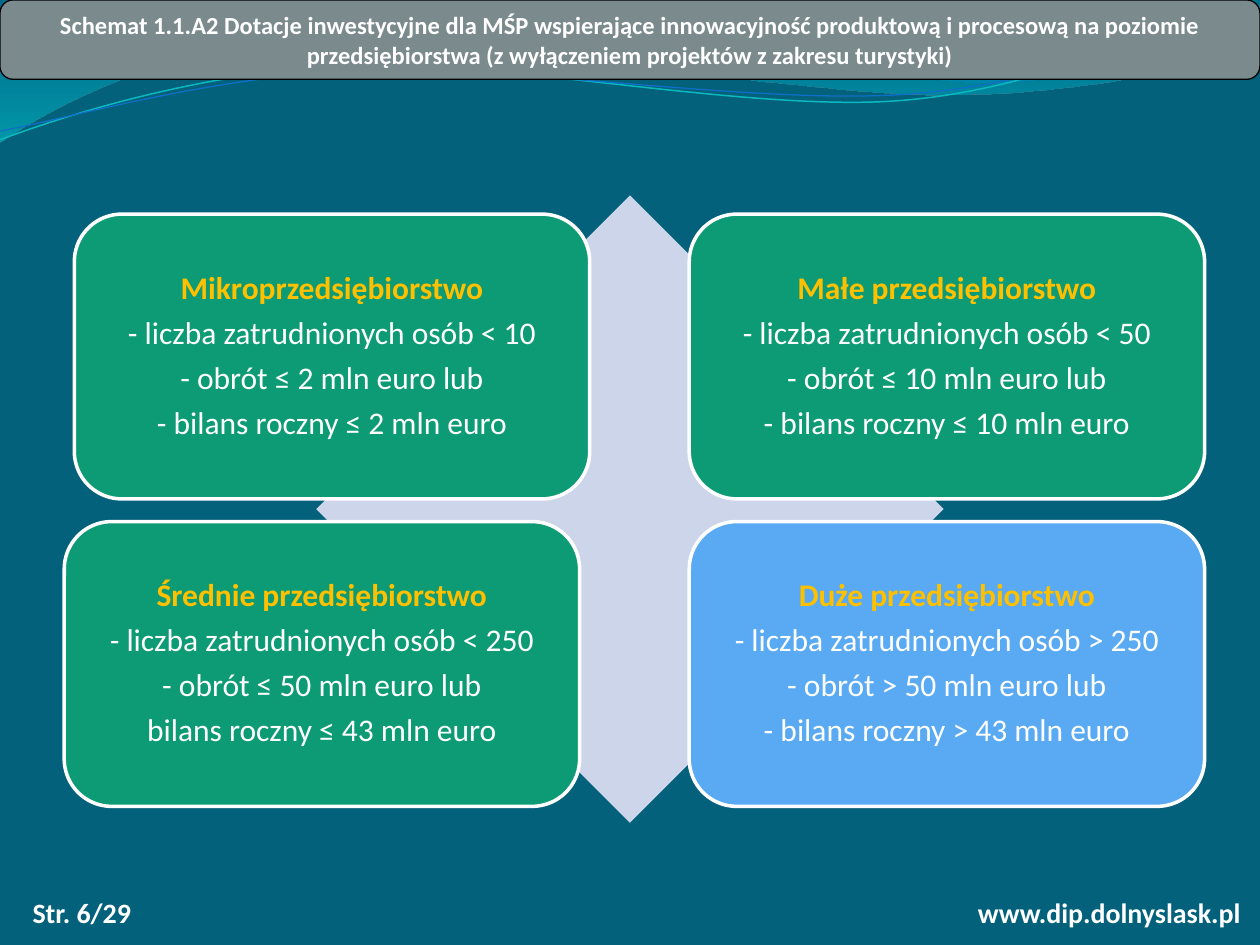
import pptx
import pptx.dml.color
import pptx.enum.shapes
import pptx.enum.text
import pptx.oxml.ns
import pptx.util

Inches, Pt = pptx.util.Inches, pptx.util.Pt
qn = pptx.oxml.ns.qn
MSO_SHAPE = pptx.enum.shapes.MSO_SHAPE
CENTER = pptx.enum.text.PP_ALIGN.CENTER
MIDDLE = pptx.enum.text.MSO_ANCHOR.MIDDLE

WIDTH, HEIGHT = 10, 7.5
FONT = "Calibri"
WHITE, GOLD, GREEN, BLUE = "FFFFFF", "FFC000", "0C9B74", "59AAF2"
CARD_WIDTH, CARD_HEIGHT = 4.09, 2.26
ROW_TOPS = (1.7, 4.14)
RIGHT_COLUMN = 5.47
UNITS_PER_INCH = 100

HEADING = ("Schemat 1.1.A2 Dotacje inwestycyjne dla MŚP wspierające innowacyjność "
           "produktową i procesową na poziomie przedsiębiorstwa "
           "(z wyłączeniem projektów z zakresu turystyki)")

# left, top, fill, lines
COMPANY_SIZES = [
    (0.59, ROW_TOPS[0], GREEN,
     ["Mikroprzedsiębiorstwo", "- liczba zatrudnionych osób < 10",
      "- obrót ≤ 2 mln euro lub", "- bilans roczny ≤ 2 mln euro"]),
    (RIGHT_COLUMN, ROW_TOPS[0], GREEN,
     ["Małe przedsiębiorstwo", "- liczba zatrudnionych osób < 50",
      "- obrót ≤ 10 mln euro lub", "- bilans roczny ≤ 10 mln euro"]),
    (0.51, ROW_TOPS[1], GREEN,
     ["Średnie przedsiębiorstwo", "- liczba zatrudnionych osób < 250",
      "- obrót ≤ 50 mln euro lub", "bilans roczny ≤ 43 mln euro"]),
    (RIGHT_COLUMN, ROW_TOPS[1], BLUE,
     ["Duże przedsiębiorstwo", "- liczba zatrudnionych osób > 250",
      "- obrót > 50 mln euro lub", "- bilans roczny > 43 mln euro"]),
]

# Each wave segment holds one end point, or two control points and an end point.
# Gradient stops: position, colour, opacity in percent.
WAVE_BANDS = [
    ([[(0, -0.01)], [(4.4, -0.01)],
      [(4.76, 0.17), (6.64, 0.63), (7.58, 0.63)],
      [(8.53, 0.63), (9.58, 0.26), (10, 0.09)], [(10.01, 0.36)],
      [(9.83, 0.44), (8.7, 0.76), (7.46, 0.75)],
      [(6.22, 0.75), (3.82, 0.28), (2.57, 0.34)],
      [(1.29, 0.35), (0.46, 0.83), (-0.01, 1.13)]],
     [(0, "0074A1", 45), (1, "00C6CF", 55)]),
    ([[(4.79, -0.01)],
      [(5.09, 0.11), (6.82, 0.62), (7.69, 0.65)],
      [(8.56, 0.69), (9.61, 0.32), (10, 0.21)], [(10, 0)]],
     [(0, "00A1A9", 30), (0.8, "008BBF", 45)]),
]
WAVE_LINES = [
    ([[(0, 1.11)],
      [(0.48, 0.93), (1.58, 0.57), (2.77, 0.52)],
      [(3.95, 0.47), (5.93, 0.89), (7.13, 0.8)],
      [(8.33, 0.71), (9.38, 0.15), (9.98, -0.02)]], "0AB8BF", 0.85),
    ([[(0, 1.04)],
      [(0.47, 0.96), (1.64, 0.61), (2.83, 0.56)],
      [(4.03, 0.51), (5.97, 0.83), (7.17, 0.75)],
      [(8.36, 0.67), (9.41, 0.21), (10, 0.06)]], "0F6FC6", 0.75),
]


def rgb(value):
    return pptx.dml.color.RGBColor.from_string(value)


def paint(shape, fill, line=None, line_width=1):
    shape.shadow.inherit = False
    shape.fill.solid()
    shape.fill.fore_color.rgb = rgb(fill)
    if line:
        shape.line.color.rgb = rgb(line)
        shape.line.width = Pt(line_width)
    else:
        shape.line.fill.background()


def write(paragraph, text, size, color=WHITE, bold=True):
    paragraph.text = text
    paragraph.alignment = CENTER
    font = paragraph.font
    font.name, font.size, font.bold = FONT, Pt(size), bold
    font.color.rgb = rgb(color)


def add_wave(slide, segments, close):
    """Draw the points as a freeform, then join each three-point segment into one cubic curve."""
    start, *rest = [tuple(round(value * UNITS_PER_INCH) for value in point)
                    for segment in segments for point in segment]
    builder = slide.shapes.build_freeform(*start, scale=Inches(1) / UNITS_PER_INCH)
    builder.add_line_segments(rest, close=False)
    wave = builder.convert_to_shape()
    wave.shadow.inherit = False
    steps = iter(list(wave._element.iter(qn("a:lnTo"))))
    for segment in segments[1:]:
        first, *others = [next(steps) for _ in segment]
        if others:
            curve = first.makeelement(qn("a:cubicBezTo"), {})
            first.addprevious(curve)
            for step in (first, *others):
                curve.append(step[0])
                step.getparent().remove(step)
    if close:
        outline = next(wave._element.iter(qn("a:moveTo"))).getparent()
        outline.append(outline.makeelement(qn("a:close"), {}))
    return wave


def add_wave_band(slide, segments, stops):
    band = add_wave(slide, segments, True)
    band.line.fill.background()
    band.fill.gradient()
    band.fill.gradient_angle = 270
    for stop, (position, color, _) in zip(band.fill.gradient_stops, stops):
        stop.position = position
        stop.color.rgb = rgb(color)
    colors = band._element.spPr.iter(qn("a:srgbClr"))
    for color, (_, _, opacity) in zip(colors, stops):
        color.append(color.makeelement(qn("a:alpha"), {"val": str(opacity * 1000)}))


def add_wave_line(slide, segments, color, width):
    wave = add_wave(slide, segments, False)
    wave.fill.background()
    wave.line.color.rgb = rgb(color)
    wave.line.width = Pt(width)


def add_diamond(slide, side):
    diamond = slide.shapes.add_shape(
        MSO_SHAPE.DIAMOND, Inches((WIDTH - side) / 2), Inches(1.55), Inches(side), Inches(side))
    paint(diamond, "CCD5EA")


def add_rounded(slide, left, top, width, height):
    box = slide.shapes.add_shape(
        MSO_SHAPE.ROUNDED_RECTANGLE, Inches(left), Inches(top), Inches(width), Inches(height))
    box.text_frame.vertical_anchor = MIDDLE
    return box


def add_card(slide, left, top, fill, lines):
    card = add_rounded(slide, left, top, CARD_WIDTH, CARD_HEIGHT)
    paint(card, fill, WHITE, 2)
    frame = card.text_frame
    frame.margin_left = frame.margin_right = Inches(0.07)
    frame.margin_top = frame.margin_bottom = Inches(0.07)
    for index, line in enumerate(lines):
        paragraph = frame.add_paragraph() if index else frame.paragraphs[0]
        write(paragraph, line, 18, WHITE if index else GOLD, index == 0)
        paragraph.line_spacing = 0.9
        paragraph.space_after = Pt(6.3)


def add_footer(slide, left, width, text, margins=(0.1, 0.1)):
    height = 0.52
    footer = slide.shapes.add_textbox(
        Inches(left), Inches(HEIGHT - height), Inches(width), Inches(height))
    frame = footer.text_frame
    frame.word_wrap = False
    frame.vertical_anchor = MIDDLE
    frame.margin_left, frame.margin_right = map(Inches, margins)
    write(frame.paragraphs[0], text, 16)


def add_heading(slide):
    heading = add_rounded(slide, 0, 0, WIDTH, 0.63)
    paint(heading, "7B8B8D", "000000", 0.75)
    write(heading.text_frame.paragraphs[0], HEADING, 14)


def main():
    deck = pptx.Presentation()
    deck.slide_width, deck.slide_height = Inches(WIDTH), Inches(HEIGHT)
    slide = deck.slides.add_slide(deck.slide_layouts[6])
    slide.background.fill.solid()
    slide.background.fill.fore_color.rgb = rgb("04617B")
    for band in WAVE_BANDS:
        add_wave_band(slide, *band)
    for line in WAVE_LINES:
        add_wave_line(slide, *line)
    add_footer(slide, 7.36, 2.64, "www.dip.dolnyslask.pl", (0.39, 0.14))
    add_footer(slide, 0, 1.3, "Str. 6/29")
    add_diamond(slide, 4.98)
    for company_size in COMPANY_SIZES:
        add_card(slide, *company_size)
    add_heading(slide)
    deck.save("out.pptx")


if __name__ == "__main__":
    main()
